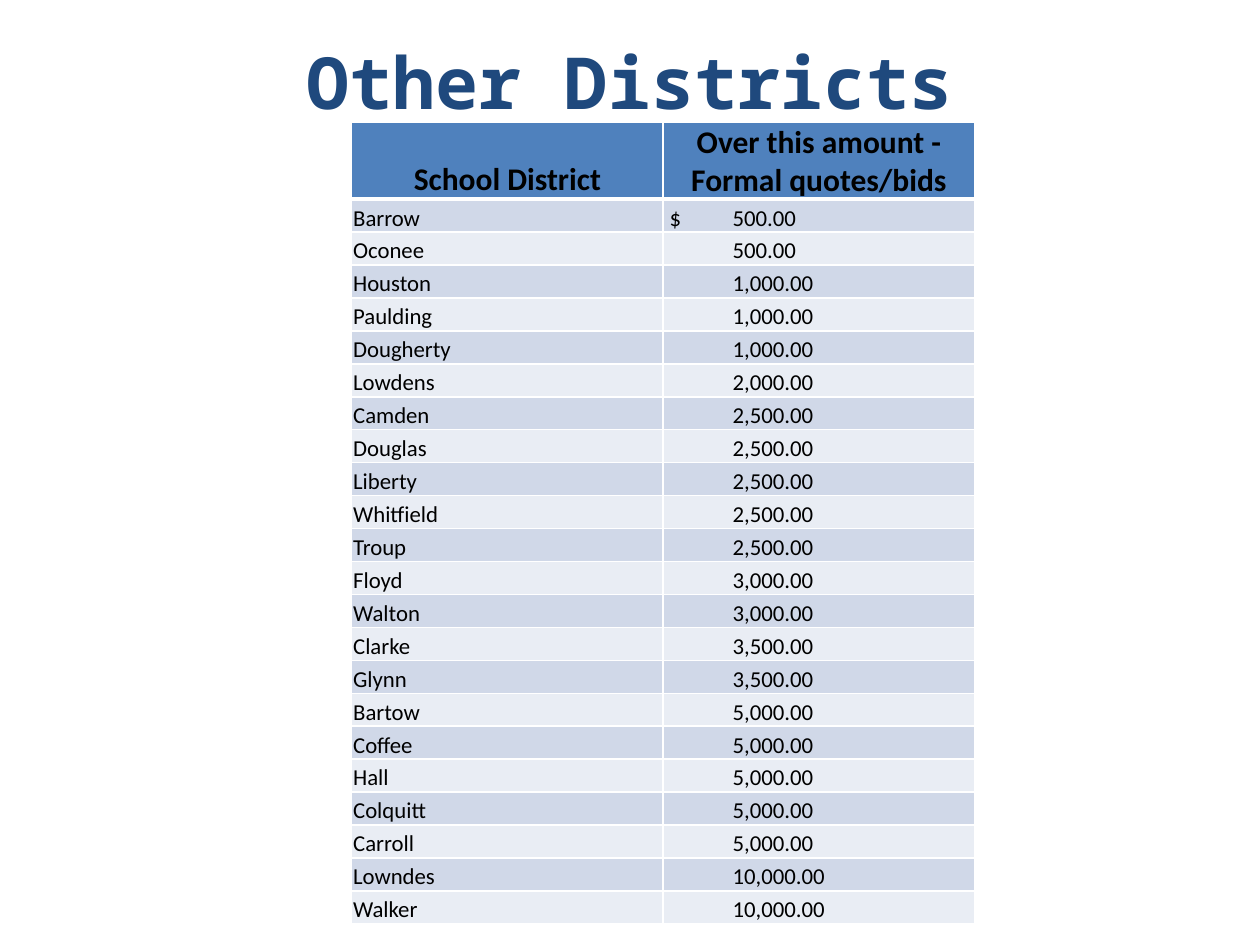
from lxml import etree
from pptx import Presentation
from pptx import util as u
from pptx.dml.color import RGBColor
from pptx.enum import text
from pptx.oxml import ns

HEADINGS = ("School District", "Over this amount - Formal quotes/bids")
DISTRICTS = (
    ("Barrow", 500), ("Oconee", 500), ("Houston", 1000), ("Paulding", 1000),
    ("Dougherty", 1000), ("Lowdens", 2000), ("Camden", 2500),
    ("Douglas", 2500), ("Liberty", 2500), ("Whitfield", 2500),
    ("Troup", 2500), ("Floyd", 3000), ("Walton", 3000), ("Clarke", 3500),
    ("Glynn", 3500), ("Bartow", 5000), ("Coffee", 5000), ("Hall", 5000),
    ("Colquitt", 5000), ("Carroll", 5000), ("Lowndes", 10000),
    ("Walker", 10000),
)
HEADER_HEIGHT = 1.55
AMOUNT_TAB = 3.66
AMOUNT_INDENT = 0.1


def color(value):
    return RGBColor.from_string(value)


def child(parent, tag, **attributes):
    element = etree.SubElement(parent, ns.qn(tag))
    for key, value in attributes.items():
        element.set(key, str(value))
    return element


def write(frame, words, font="Calibri", size=13, ink="000000", bold=False,
          align=text.PP_ALIGN.LEFT, tab=None, indent=0):
    frame.word_wrap = True
    paragraph = frame.paragraphs[0]
    paragraph.alignment = align
    if tab:
        properties = paragraph._p.get_or_add_pPr()
        properties.set("marL", str(u.Cm(indent)))
        properties.set("indent", "0")
        stops = child(properties, "a:tabLst")
        child(stops, "a:tab", pos=u.Cm(tab), algn="r")
    run = paragraph.add_run()
    run.text = words
    run.font.name = font
    run.font.size = u.Pt(size)
    run.font.bold = bold
    run.font.color.rgb = color(ink)


def style_cell(cell, fill, bottom=1, top=1):
    cell.vertical_anchor = text.MSO_ANCHOR.BOTTOM
    cell.margin_left = cell.margin_right = cell.margin_top = u.Cm(0.03)
    cell.margin_bottom = 0
    properties = cell._tc.get_or_add_tcPr()
    for side, width in (("L", 1), ("R", 1), ("T", top), ("B", bottom)):
        line = child(properties, f"a:ln{side}", w=u.Pt(width))
        child(child(line, "a:solidFill"), "a:srgbClr", val="FFFFFF")
    cell.fill.solid()
    cell.fill.fore_color.rgb = color(fill)


def add_title(slide, left, top, width, height):
    box = slide.shapes.add_textbox(u.Cm(left), u.Cm(top), u.Cm(width), u.Cm(height))
    frame = box.text_frame
    frame.margin_top = frame.margin_bottom = 0
    frame.vertical_anchor = text.MSO_ANCHOR.TOP
    write(frame, "Other Districts", font="Noto Sans Mono", size=41,
          ink="1F497D", bold=True, align=text.PP_ALIGN.CENTER)


def add_districts(slide, left, top, width, height):
    table = slide.shapes.add_table(
        len(DISTRICTS) + 1, len(HEADINGS),
        u.Cm(left), u.Cm(top), u.Cm(width), u.Cm(height)).table
    table.horz_banding = False
    for column in table.columns:
        column.width = u.Cm(width / len(HEADINGS))
    row_height = (height - HEADER_HEIGHT) / len(DISTRICTS)
    for index, row in enumerate(table.rows):
        row.height = u.Cm(row_height if index else HEADER_HEIGHT)

    for index, heading in enumerate(HEADINGS):
        cell = table.cell(0, index)
        style_cell(cell, "4F81BD", bottom=3)
        write(cell.text_frame, heading, size=18, bold=True,
              align=text.PP_ALIGN.CENTER)

    for index, (district, amount) in enumerate(DISTRICTS, start=1):
        name_cell, amount_cell = table.cell(index, 0), table.cell(index, 1)
        for cell in (name_cell, amount_cell):
            style_cell(cell, "D0D8E8" if index % 2 else "E9EDF4",
                       top=3 if index == 1 else 1)
        currency = "$" if index == 1 else ""
        write(name_cell.text_frame, district)
        write(amount_cell.text_frame, f"{currency}\t{amount:,.2f}",
              tab=AMOUNT_TAB, indent=AMOUNT_INDENT)


def main():
    deck = Presentation()
    deck.slide_width, deck.slide_height = u.Cm(25.4), u.Cm(19.05)
    slide = deck.slides.add_slide(deck.slide_layouts[6])
    add_title(slide, 1.27, 0.76, 22.86, 3.18)
    add_districts(slide, 7.09, 2.46, 12.56, 16.16)
    deck.save("out.pptx")


if __name__ == "__main__":
    main()
